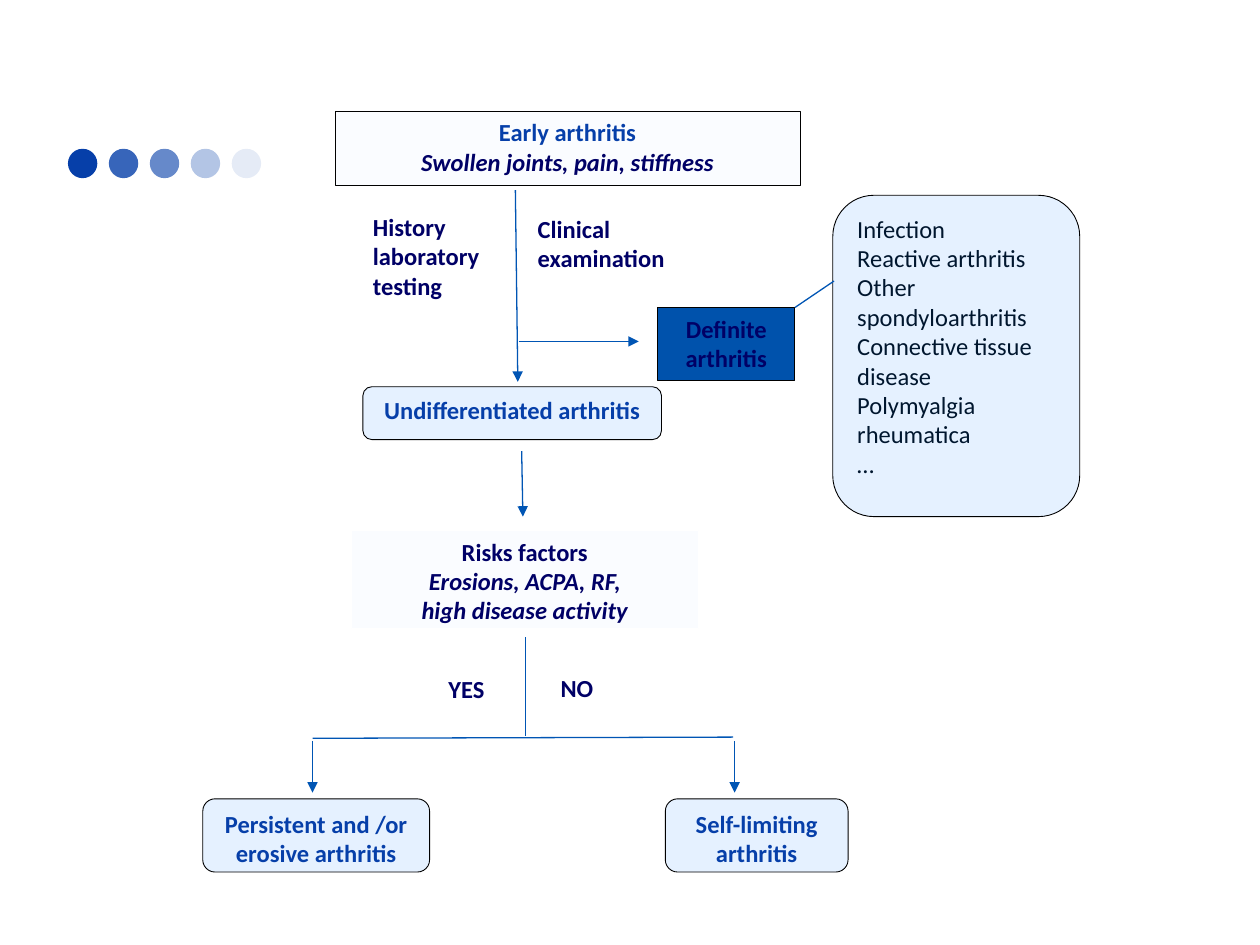
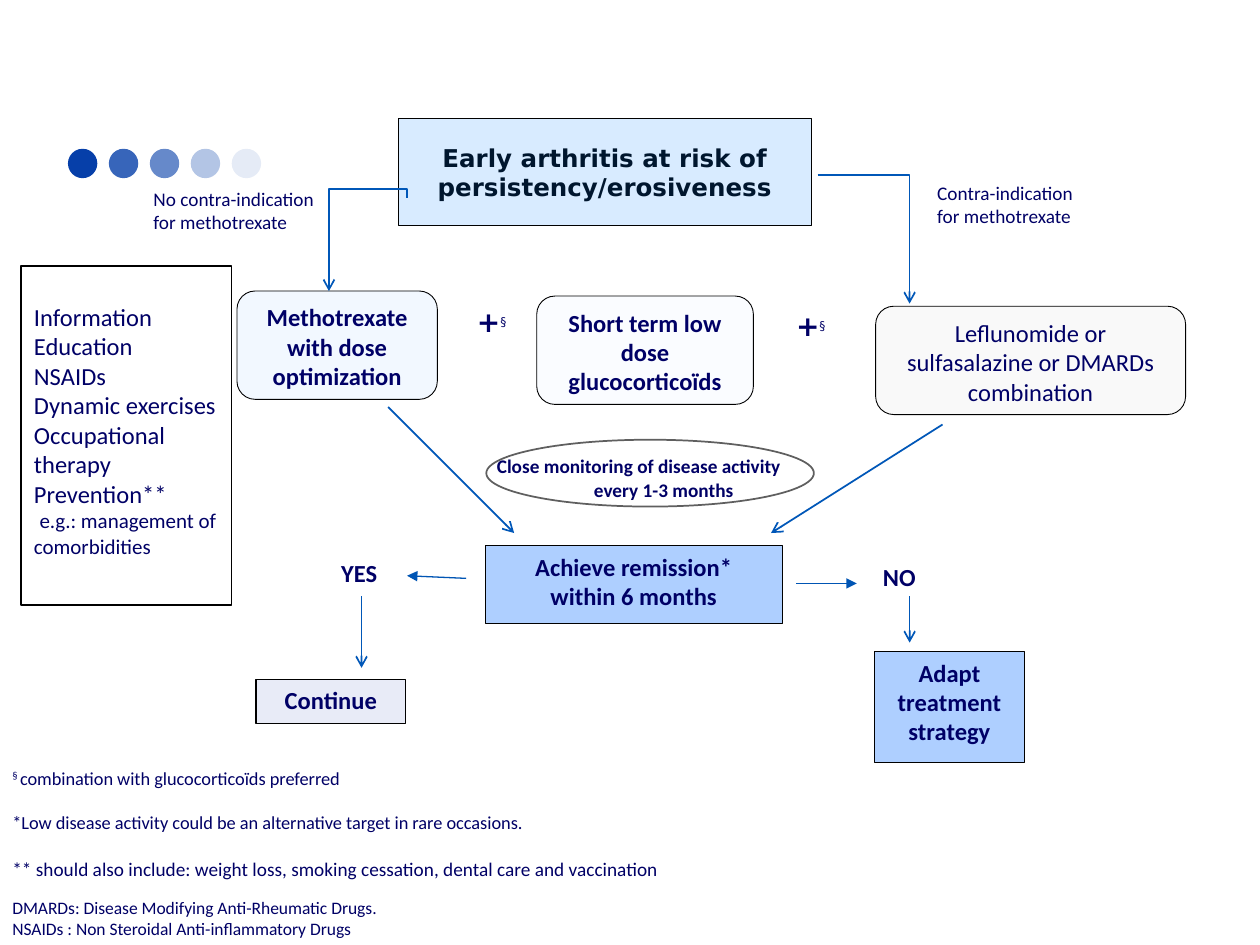
from dataclasses import dataclass

from lxml.etree import SubElement
from pptx import Presentation
from pptx.dml.color import RGBColor
from pptx.enum.shapes import MSO_CONNECTOR, MSO_SHAPE
from pptx.enum.text import MSO_ANCHOR, MSO_AUTO_SIZE, PP_ALIGN
from pptx.oxml.ns import qn
from pptx.util import Pt

COLORS = {
    "brand": "063FA9",
    "navy": "000066",
    "ink": "00162E",
    "black": "000000",
    "white": "FFFFFF",
    "line": "0055B4",
    "arrow": "0057B8",
    "grey": "5F5F5F",
    "deep": "0052AC",
    "mist": "FAFCFF",
    "ice": "E5F1FF",
    "sky": "D8EBFF",
    "azure": "AECFFF",
    "frost": "F2F8FF",
    "pearl": "F9F9F9",
    "lavender": "E8EBF7",
}
RECTANGLE = MSO_SHAPE.RECTANGLE
ROUNDED = MSO_SHAPE.FLOWCHART_ALTERNATE_PROCESS
DOT_OPACITIES = (100, 80, 61, 30, 10)


@dataclass
class Box:
    left: float
    top: float
    width: float
    height: float

    def inner(self, left, top, width, height):
        return Box(self.left + left, self.top + top, width, height)

    def lengths(self):
        return Pt(self.left), Pt(self.top), Pt(self.width), Pt(self.height)


def rgb(name):
    return RGBColor.from_string(COLORS[name])


def paint(shape, fill=None, line=None, weight=0.5):
    if fill:
        shape.fill.solid()
        shape.fill.fore_color.rgb = rgb(fill)
    else:
        shape.fill.background()
    if line:
        shape.line.color.rgb = rgb(line)
        shape.line.width = Pt(weight)
    else:
        shape.line.fill.background()


def style_run(run, size=14, color="navy", bold=False, italic=False, font="Calibri"):
    run.font.size = Pt(size)
    run.font.color.rgb = rgb(color)
    run.font.bold = bold
    run.font.italic = italic
    run.font.name = font


def raise_run(run):
    run._r.get_or_add_rPr().set("baseline", "30000")


def write(shape, lines, align=PP_ALIGN.LEFT, anchor=MSO_ANCHOR.TOP, **style):
    frame = shape.text_frame
    frame.word_wrap = True
    frame.auto_size = MSO_AUTO_SIZE.NONE
    frame.vertical_anchor = anchor
    frame.text = "\n".join(lines)
    for paragraph in frame.paragraphs:
        paragraph.alignment = align
        paragraph.space_before = Pt(0)
        for run in paragraph.runs:
            style_run(run, **style)
    return frame


def indent(paragraph, margin, first_line=0):
    properties = paragraph._p.get_or_add_pPr()
    properties.set("marL", str(Pt(margin)))
    properties.set("indent", str(Pt(first_line)))
    return properties


def add_node(slide, box, lines, fill, kind=RECTANGLE, line="black", weight=0.5,
             align=PP_ALIGN.CENTER, **style):
    shape = slide.shapes.add_shape(kind, *box.lengths())
    shape.shadow.inherit = False
    paint(shape, fill, line, weight)
    return write(shape, lines, align, **style)


def add_label(slide, box, lines, **style):
    return write(slide.shapes.add_textbox(*box.lengths()), lines, **style)


def add_line(slide, box, points, head=None, color="line", weight=0.75,
             kind=MSO_CONNECTOR.STRAIGHT):
    start_x, start_y, end_x, end_y = points
    connector = slide.shapes.add_connector(
        kind, Pt(box.left + start_x), Pt(box.top + start_y),
        Pt(box.left + end_x), Pt(box.top + end_y))
    connector.line.color.rgb = rgb(color)
    connector.line.width = Pt(weight)
    if head:
        SubElement(connector.line._get_or_add_ln(), qn("a:tailEnd"), type=head)
    SubElement(connector._element.spPr, qn("a:effectLst"))
    return connector


def add_open_arrow(slide, box, points, kind=MSO_CONNECTOR.STRAIGHT):
    return add_line(slide, box, points, "arrow", "arrow", 1, kind)


def add_dots(slide, box):
    step = (box.width - box.height) / (len(DOT_OPACITIES) - 1)
    for index, opacity in enumerate(DOT_OPACITIES):
        dot_box = box.inner(index * step, 0, box.height, box.height)
        dot = slide.shapes.add_shape(MSO_SHAPE.OVAL, *dot_box.lengths())
        dot.shadow.inherit = False
        paint(dot, "brand")
        if opacity < 100:
            color = dot._element.spPr.find(qn("a:solidFill"))[0]
            SubElement(color, qn("a:alpha"), val=str(opacity * 1000))


def place(placeholder, box):
    placeholder.left, placeholder.top, placeholder.width, placeholder.height = box.lengths()


def add_titled_slide(presentation, layout_index, box, lines, fill, **style):
    slide = presentation.slides.add_slide(presentation.slide_layouts[layout_index])
    title = slide.shapes.title
    place(title, box)
    paint(title, fill, "black")
    write(title, lines, PP_ALIGN.CENTER, bold=True, **style)
    add_dots(slide, Box(38.8, 85, 110.4, 16.8))
    return slide


def add_diagnosis(slide, box):
    add_line(slide, box, (96.6, 87.1, 165, 87.1), "triangle")
    add_node(slide, box.inner(7.4, 113, 170.6, 30.2), ["Undifferentiated arthritis"],
             "ice", ROUNDED, color="brand", bold=True)
    add_node(slide, box.inner(175.8, 67.7, 78.5, 41.8), ["Definite arthritis"],
             "deep", bold=True)
    causes = ["Infection", "Reactive arthritis", "Other spondyloarthritis",
              "Connective tissue disease", "Polymyalgia rheumatica", "…"]
    add_node(slide, box.inner(275.9, 3.6, 141.1, 183.6), causes, "ice", ROUNDED,
             align=PP_ALIGN.LEFT, color="ink")
    add_label(slide, box.inner(6, 9.4, 84.2, 56.9), ["History laboratory testing"], bold=True)
    add_label(slide, box.inner(100.2, 10.8, 103.7, 47.5), ["Clinical examination"], bold=True)
    add_line(slide, box, (254.3, 67.7, 276.6, 52.6))
    add_line(slide, box, (94.5, 0.7, 95.9, 110.2), "triangle")


def add_prognosis(slide, box):
    add_line(slide, box, (188.1, 2.8, 188.8, 40.2), "triangle")
    risks = add_node(slide, box.inner(90.9, 48.1, 198, 56.2),
                     ["Risks factors", "Erosions, ACPA, RF,", "high disease activity"],
                     "mist", line="white", bold=True)
    for paragraph in risks.paragraphs[1:]:
        paragraph.runs[0].font.italic = True
    add_line(slide, box, (190.2, 109.3, 190.2, 165.5))
    add_line(slide, box, (68.6, 166.9, 309, 166.2))
    outcomes = [
        (68.6, 5.9, 129.6, "Persistent and /or erosive arthritis"),
        (309.8, 270.2, 104.4, "Self-limiting arthritis"),
    ]
    for arrow_x, left, width, text in outcomes:
        add_line(slide, box, (arrow_x, 168.4, arrow_x, 197.9), "triangle")
        add_node(slide, box.inner(left, 201.5, width, 41.8), [text], "ice", ROUNDED,
                 color="brand", bold=True)
    add_label(slide, box.inner(139.1, 126.6, 37.4, 20.2), ["YES"], bold=True)
    add_label(slide, box.inner(203.2, 125.9, 37.4, 20.2), ["NO"], bold=True)


def add_general_measures(slide, box):
    measures = slide.placeholders[1]
    place(measures, box)
    paint(measures, "white", "black", 1)
    frame = write(measures, ["Information", "Education", "NSAIDs", "Dynamic exercises",
                             "Occupational therapy", "Prevention**",
                             "e.g.: management of comorbidities"])
    frame.margin_top = Pt(20.7)
    for paragraph in frame.paragraphs:
        SubElement(indent(paragraph, 0), qn("a:buNone"))
    example = frame.paragraphs[-1]
    indent(example, 0, 3.2)
    example.runs[0].font.size = Pt(12)


def add_plus(slide, box, margin):
    frame = add_label(slide, box, ["+"], size=16, bold=True, font="DejaVu Sans")
    frame.margin_left = Pt(margin)
    mark = frame.paragraphs[0].add_run()
    mark.text = "§"
    style_run(mark, size=12, font="DejaVu Sans")
    raise_run(mark)


def add_treatments(slide, box):
    add_label(slide, box.inner(0.6, 0.6, 135.4, 53.3),
              ["No contra-indication", "for methotrexate"],
              anchor=MSO_ANCHOR.MIDDLE, size=11)
    add_label(slide, box.inner(448.5, 7.1, 108, 45.4),
              ["Contra-indication", "for methotrexate"], size=11)
    treatments = [
        (55.4, 73.3, 114.5, "Methotrexate with dose optimization", "frost", True),
        (226.7, 76.2, 123.8, "Short term low dose glucocorticoïds", "mist", True),
        (420.4, 82, 177.1, "Leflunomide or sulfasalazine or DMARDs combination",
         "pearl", False),
    ]
    for left, top, width, text, fill, bold in treatments:
        add_node(slide, box.inner(left, top, width, 61.9), [text], fill, ROUNDED, bold=bold)
    add_plus(slide, box.inner(174.9, 77.6, 47.5, 72), 17.7)
    add_plus(slide, box.inner(354.2, 79.8, 63.4, 54.7), 20.7)
    left_branch = add_open_arrow(slide, box, (103.6, 24.4, 156.9, 69), MSO_CONNECTOR.ELBOW)
    left_branch.rotation = 90
    adjustments = left_branch._element.spPr.prstGeom.get_or_add_avLst()
    SubElement(adjustments, qn("a:gd"), name="adj1", fmla="val -9100")
    right_branch = add_open_arrow(slide, box, (387.3, 7.1, 439.8, 80.5), MSO_CONNECTOR.ELBOW)
    right_branch._element.spPr.prstGeom.set("prst", "bentConnector2")


def add_follow_up(slide, box):
    add_node(slide, box.inner(137.2, 81.8, 169.9, 44.6),
             ["Achieve remission*", "within 6 months"], "azure", bold=True)
    monitoring = add_label(slide, box.inner(117.8, 26.3, 243.4, 34.6),
                           ["Close monitoring of disease activity", "every 1-3 months"],
                           size=11, bold=True)
    for paragraph, margin in zip(monitoring.paragraphs, (19, 74.5)):
        indent(paragraph, margin)
    ellipse = slide.shapes.add_shape(
        MSO_SHAPE.OVAL, *box.inner(137.9, 21.3, 187.2, 38.2).lengths())
    ellipse.shadow.inherit = False
    paint(ellipse, line="grey", weight=1)
    add_label(slide, box.inner(47.9, 85.4, 44.6, 23), ["YES"], bold=True)
    add_label(slide, box.inner(357.5, 87.5, 45.4, 23), ["NO"], bold=True)
    add_node(slide, box.inner(359.7, 142.2, 85.7, 63.4), ["Adapt treatment strategy"],
             "azure", weight=0.75, bold=True)
    add_node(slide, box.inner(6.2, 158.1, 85.7, 25.2), ["Continue"],
             "lavender", weight=0.75, bold=True)
    for points in [(315, 103.4, 349.6, 103.4), (126.4, 100.5, 92.6, 99)]:
        add_line(slide, box, points, "triangle")
    for points in [(81.8, 2.6, 153.8, 74.6), (398.6, 12.6, 300.6, 74.6),
                   (66.6, 110.6, 66.6, 151.6), (379.8, 110.6, 379.8, 137.2)]:
        add_open_arrow(slide, box, points)


def add_footnotes(slide, box):
    notes = [
        ("§ combination with glucocorticoïds preferred", 10.5, 0),
        ("*Low disease activity could be an alternative target in rare occasions.", 10.5, 12.8),
        ("** should also include: weight loss, smoking cessation, dental care and vaccination",
         11, 13.4),
        ("DMARDs: Disease Modifying Anti-Rheumatic Drugs.", 10, 9.8),
        ("NSAIDs : Non Steroidal Anti-inflammatory Drugs", 10, 0),
    ]
    frame = add_label(slide, box, [text for text, size, gap in notes])
    frame.margin_top = Pt(16.4)
    for paragraph, (text, size, gap) in zip(frame.paragraphs, notes):
        paragraph.space_before = Pt(gap)
        paragraph.runs[0].font.size = Pt(size)
    first = frame.paragraphs[0]
    mark = first.runs[0]
    mark.text = "§ "
    raise_run(mark)
    note = first.add_run()
    note.text = notes[0][0][2:]
    style_run(note, size=10.5)


def build_diagnosis_slide(presentation):
    slide = add_titled_slide(presentation, 5, Box(191.5, 63.4, 265.7, 42.5),
                             ["Early arthritis", "Swollen joints, pain, stiffness"],
                             "mist", color="brand")
    symptoms = slide.shapes.title.text_frame.paragraphs[1].runs[0]
    style_run(symptoms, bold=True, italic=True)
    add_diagnosis(slide, Box(200, 108, 420, 190))
    add_prognosis(slide, Box(110, 255, 380, 245))


def build_treatment_slide(presentation):
    slide = add_titled_slide(presentation, 1, Box(227.5, 67.7, 236.2, 61.2),
                             ["Early arthritis at risk of persistency/erosiveness"], "sky",
                             anchor=MSO_ANCHOR.MIDDLE, color="ink", font="DejaVu Sans")
    add_general_measures(slide, Box(12.2, 151.9, 120.2, 193.7))
    add_treatments(slide, Box(80, 93, 600, 150))
    add_follow_up(slide, Box(140, 230, 450, 206))
    add_footnotes(slide, Box(0, 421.9, 664.6, 72))


def main():
    presentation = Presentation()
    presentation.slide_width = Pt(720)
    presentation.slide_height = Pt(540)
    build_diagnosis_slide(presentation)
    build_treatment_slide(presentation)
    presentation.save("out.pptx")


if __name__ == "__main__":
    main()
